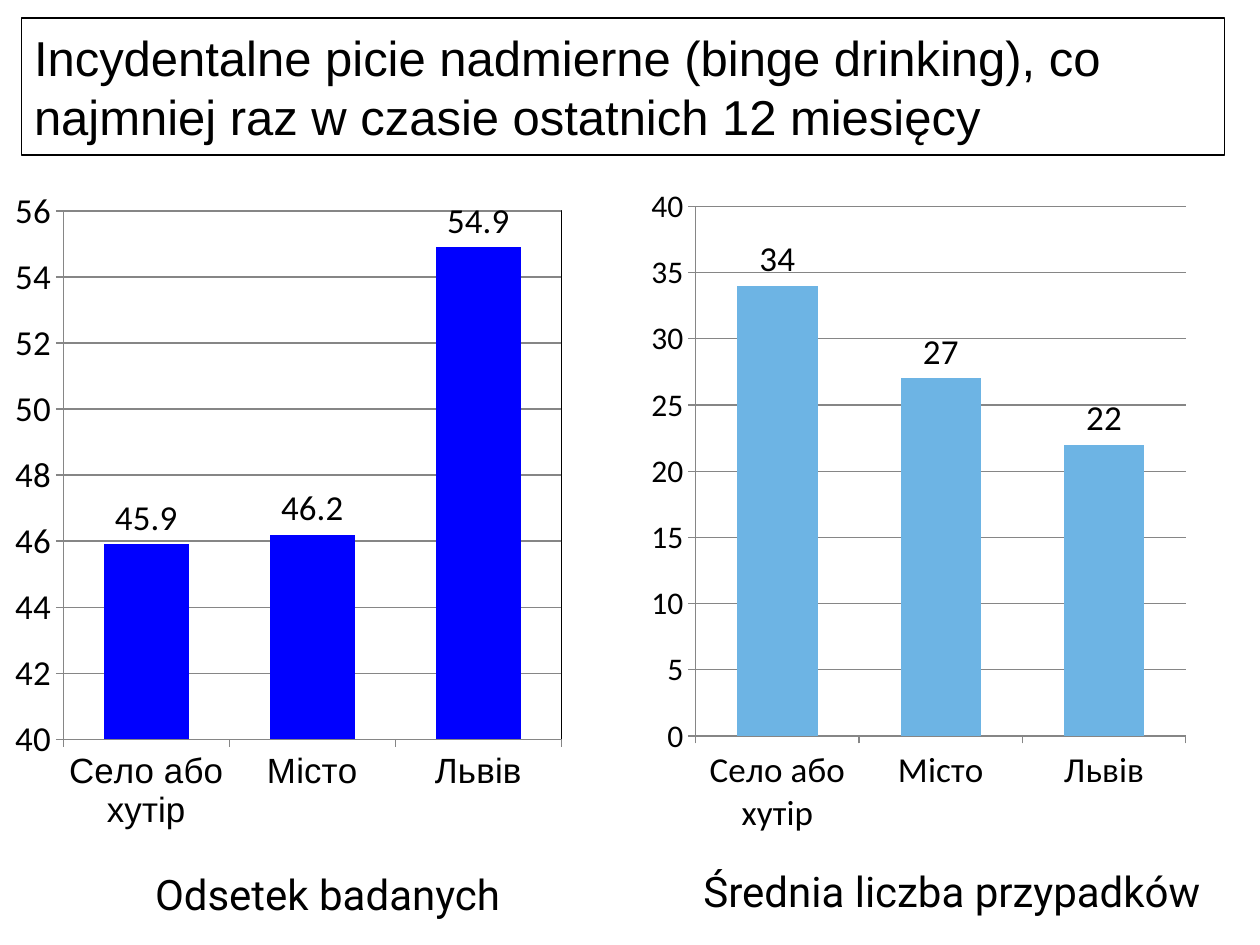
from lxml import etree
from pptx import Presentation
from pptx.chart.data import CategoryChartData
from pptx.dml.color import RGBColor
from pptx.enum.chart import XL_CHART_TYPE as ChartType, XL_LABEL_POSITION as LabelPosition
from pptx.enum.chart import XL_TICK_MARK as TickMark
from pptx.enum.text import MSO_ANCHOR as Anchor, PP_ALIGN as Align
from pptx.oxml import parse_xml
from pptx.oxml.ns import nsdecls, qn
from pptx.util import Inches, Pt

BLACK = RGBColor(0x00, 0x00, 0x00)
WHITE = RGBColor(0xFF, 0xFF, 0xFF)
GREY = RGBColor(0x86, 0x86, 0x86)
BLUE = RGBColor(0x00, 0x00, 0xFF)
SKY = RGBColor(0x6D, 0xB4, 0xE4)

CATEGORIES = ["Село або хутір", "Місто", "Львів"]


class SlideBuilder:
    def __init__(self, presentation):
        self.width = presentation.slide_width
        self.height = presentation.slide_height
        self.slide = presentation.slides.add_slide(presentation.slide_layouts[5])

    def box(self, left, top, width, height):
        return (round(left * self.width), round(top * self.height),
                round(width * self.width), round(height * self.height))

    def style_font(self, font, name, size):
        font.name = name
        font.size = Pt(size)
        font.color.rgb = BLACK

    def title(self, share, text):
        shape = self.slide.shapes.title
        shape.left, shape.top, shape.width, shape.height = self.box(*share)
        shape.line.color.rgb = BLACK
        shape.line.width = Pt(0.75)
        frame = shape.text_frame
        frame.word_wrap = True
        frame.vertical_anchor = Anchor.MIDDLE
        paragraph = frame.paragraphs[0]
        paragraph.text = text
        paragraph.alignment = Align.LEFT
        self.style_font(paragraph.font, "Arial", 28)

    def caption(self, share, text):
        frame = self.slide.shapes.add_textbox(*self.box(*share)).text_frame
        frame.word_wrap = True
        paragraph = frame.paragraphs[0]
        paragraph.text = text
        paragraph.alignment = Align.CENTER
        self.style_font(paragraph.font, "Roboto", 24)

    def column_chart(self, share, values, color, gap, scale, plot_area,
                     category_font, value_size, label_format, framed=False):
        data = CategoryChartData()
        data.categories = CATEGORIES
        data.add_series("Series 1", values)
        chart = self.slide.shapes.add_chart(
            ChartType.COLUMN_CLUSTERED, *self.box(*share), data).chart
        chart.has_title = False
        chart.has_legend = False
        self.style_font(chart.font, "Calibri", 18)

        plot = chart.plots[0]
        plot.gap_width = gap
        plot.vary_by_categories = False
        fill = plot.series[0].format.fill
        fill.solid()
        fill.fore_color.rgb = color
        plot.has_data_labels = True
        labels = plot.data_labels
        labels.show_value = True
        labels.position = LabelPosition.OUTSIDE_END
        labels.number_format = label_format
        labels.number_format_is_linked = False
        self.style_font(labels.font, "Calibri", 20)

        category_axis, value_axis = chart.category_axis, chart.value_axis
        for axis, font, size in ((category_axis, category_font, 20),
                                 (value_axis, "Calibri", value_size)):
            axis.major_tick_mark = TickMark.OUTSIDE
            axis.minor_tick_mark = TickMark.NONE
            axis.format.line.color.rgb = GREY
            self.style_font(axis.tick_labels.font, font, size)
        value_axis.minimum_scale, value_axis.maximum_scale, value_axis.major_unit = scale
        value_axis.tick_labels.number_format = "0"
        value_axis.tick_labels.number_format_is_linked = False
        value_axis.has_major_gridlines = True
        value_axis.major_gridlines.format.line.color.rgb = GREY
        self.place_plot(chart, plot_area, framed)

    def place_plot(self, chart, plot_area, framed):
        area = chart.element.find(".//" + qn("c:plotArea"))
        for old in area.findall(qn("c:layout")):
            area.remove(old)
        layout = etree.Element(qn("c:layout"))
        manual = etree.SubElement(layout, qn("c:manualLayout"))
        settings = [("layoutTarget", "inner"), ("xMode", "edge"), ("yMode", "edge")]
        settings += zip("xywh", map(str, plot_area))
        for tag, value in settings:
            etree.SubElement(manual, qn("c:" + tag)).set("val", value)
        area.insert(0, layout)
        if framed:
            area.append(parse_xml(
                f'<c:spPr {nsdecls("c", "a")}><a:noFill/><a:ln w="9525"><a:solidFill>'
                f'<a:srgbClr val="{BLACK}"/></a:solidFill></a:ln></c:spPr>'))


def main():
    presentation = Presentation()
    presentation.slide_width = Inches(10)
    presentation.slide_height = Inches(7.5)
    builder = SlideBuilder(presentation)
    background = builder.slide.background.fill
    background.solid()
    background.fore_color.rgb = WHITE

    builder.title((0.017, 0.019, 0.955, 0.145),
                  "Incydentalne picie nadmierne (binge drinking), co najmniej raz "
                  "w czasie ostatnich 12 miesięcy")
    builder.column_chart((0.012, 0.185, 0.465, 0.708), (45.9, 46.2, 54.9), BLUE, 95,
                         (40, 56, 2), (0.078, 0.054, 0.854, 0.79),
                         "Arial", 20, "0.0", framed=True)
    builder.column_chart((0.508, 0.185, 0.442, 0.713), (34, 27, 22), SKY, 103,
                         (0, 40, 5), (0.1, 0.047, 0.88, 0.786),
                         "Calibri", 18, "#,##0")
    builder.caption((0.067, 0.913, 0.386, 0.067), "Odsetek badanych")
    builder.caption((0.539, 0.909, 0.433, 0.067), "Średnia liczba przypadków")
    presentation.save("out.pptx")


if __name__ == "__main__":
    main()
